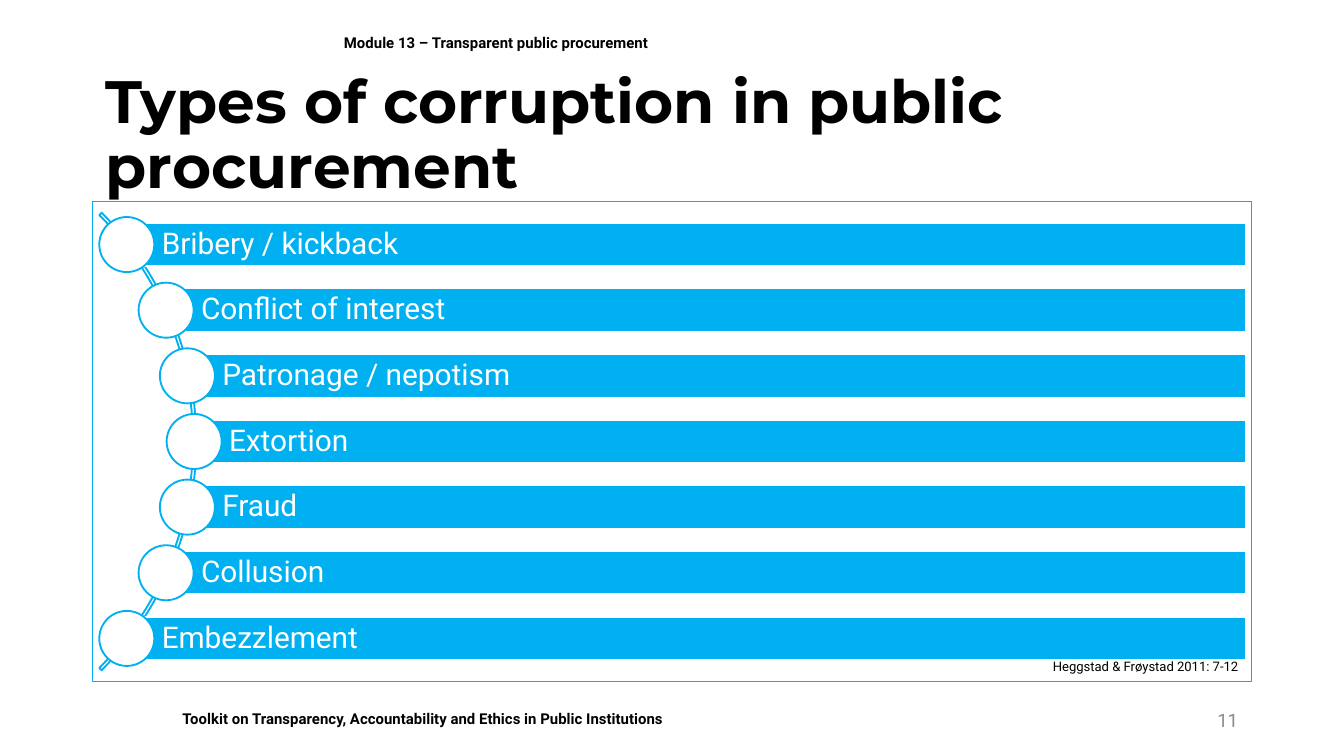
from math import sqrt

from pptx import Presentation
from pptx.dml.color import RGBColor
from pptx.enum.shapes import MSO_SHAPE as Shape
from pptx.enum.text import MSO_ANCHOR as Anchor, PP_ALIGN as Align
from pptx.util import Cm, Pt

COLORS = {"accent": "00B0F0", "white": "FFFFFF", "black": "000000", "grey": "8C8C8C"}
TYPES = ["Bribery / kickback", "Conflict of interest", "Patronage / nepotism",
         "Extortion", "Fraud", "Collusion", "Embezzlement"]

# List geometry in cm: the circles sit on one arc
ARC_X, ARC_Y, ARC_SIZE, RADIUS = -2.4, 8.34, 12.22, 6.07
STEP, BAR_H, BAR_RIGHT, DOT = 1.24, 0.82, 23.54, 1.04


def rgb(name):
    return RGBColor.from_string(COLORS[name])


def set_attrs(obj, values):
    for name, value in values.items():
        setattr(obj, name, value)


def add_shape(s, kind, box, fill=None, line=None, width=1):
    sp = s.shapes.add_shape(kind, *map(Cm, box))
    sp.shadow.inherit = False
    if fill:
        sp.fill.solid()
        sp.fill.fore_color.rgb = rgb(fill)
    else:
        sp.fill.background()
    if line:
        sp.line.color.rgb = rgb(line)
        sp.line.width = Pt(width)
    else:
        sp.line.fill.background()
    return sp


def write(sp, text, size, color="black", font="Roboto", bold=False, frame=None, para=None):
    tf = sp.text_frame
    set_attrs(tf, {"word_wrap": True, "vertical_anchor": Anchor.MIDDLE} | (frame or {}))
    p = tf.paragraphs[0]
    set_attrs(p, {"alignment": Align.LEFT} | (para or {}))
    r = p.add_run()
    r.text = text
    set_attrs(r.font, {"name": font, "size": Pt(size), "bold": bold})
    r.font.color.rgb = rgb(color)


def add_text(s, box, text, size, **style):
    write(s.shapes.add_textbox(*map(Cm, box)), text, size, **style)


def add_item(s, index, text):
    dy = (index - (len(TYPES) - 1) / 2) * STEP
    x, y = ARC_X + sqrt(RADIUS ** 2 - dy ** 2), ARC_Y + dy
    bar = add_shape(s, Shape.RECTANGLE, (x, y - BAR_H / 2, BAR_RIGHT - x, BAR_H),
                    "accent", "white")
    margins = {"margin_left": Cm(0.66), "margin_right": Cm(0.1),
               "margin_top": Cm(0.1), "margin_bottom": Cm(0.1)}
    write(bar, text, 16, color="white", frame=margins, para={"line_spacing": 0.9})
    add_shape(s, Shape.OVAL, (x - DOT / 2, y - DOT / 2, DOT, DOT), "white", "accent")


def main():
    prs = Presentation()
    set_attrs(prs, {"slide_width": Cm(25.4), "slide_height": Cm(14.28)})
    s = prs.slides.add_slide(prs.slide_layouts[6])
    top = {"vertical_anchor": Anchor.TOP}
    right = {"alignment": Align.RIGHT}

    # Footer
    footer = add_shape(s, Shape.RECTANGLE, (3.2, 13.28, 18.21, 0.61), "white")
    write(footer, "Toolkit on Transparency, Accountability and Ethics in Public Institutions",
          8, bold=True, frame=top, para={"space_after": Pt(18)})

    # Frame, arc and list of types
    add_shape(s, Shape.RECTANGLE, (1.75, 3.81, 21.9, 9.07), line="accent", width=0.75)
    half = ARC_SIZE / 2
    arc = add_shape(s, Shape.BLOCK_ARC, (ARC_X - half, ARC_Y - half, ARC_SIZE, ARC_SIZE),
                    line="accent")
    for i, value in enumerate((189, 27, 0.005)):
        arc.adjustments[i] = value
    for i, text in enumerate(TYPES):
        add_item(s, i, text)

    # Header, slide number, title and source
    add_text(s, (6.25, 0.25, 17.4, 1.12), "Module 13 – Transparent public procurement",
             8, bold=True)
    add_text(s, (17.93, 13.23, 5.72, 0.76), "11", 10, color="grey", para=right)
    add_text(s, (1.75, 1.63, 21.9, 1.9), "Types of corruption in public procurement",
             32, font="Montserrat", bold=True, para={"line_spacing": 0.9})
    add_text(s, (17.93, 12.32, 5.72, 0.56), "Heggstad & Frøystad 2011: 7-12",
             7, frame=top, para=right)

    prs.save("out.pptx")


if __name__ == "__main__":
    main()
